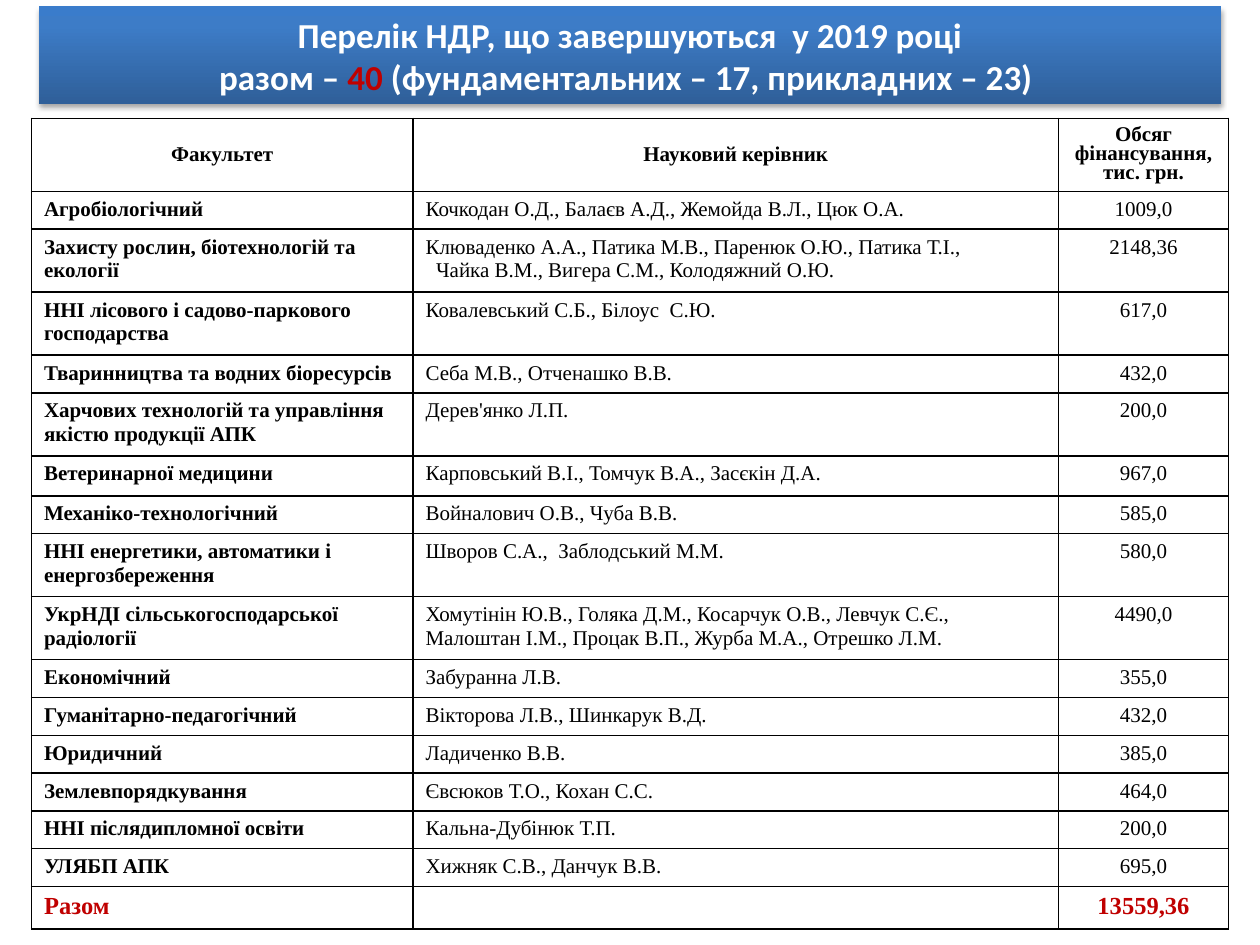
from lxml import etree
from pptx import Presentation
from pptx.dml.color import RGBColor
from pptx.enum import text
from pptx.oxml import parse_xml
from pptx.oxml import ns
from pptx.util import Pt

SINGLE, DOUBLE = 21.6, 36
HEADINGS = ("Факультет", "Науковий керівник", "Обсяг фінансування, тис. грн.")
FACULTIES = [
    ("Агробіологічний", "Кочкодан О.Д., Балаєв А.Д., Жемойда В.Л., Цюк О.А.", "1009,0", SINGLE),
    ("Захисту рослин, біотехнологій та екології",
     "Клюваденко А.А., Патика М.В., Паренюк О.Ю., Патика Т.І.,\n"
     "Чайка В.М., Вигера С.М., Колодяжний О.Ю.", "2148,36", DOUBLE),
    ("ННІ лісового і садово-паркового господарства", "Ковалевський С.Б., Білоус  С.Ю.", "617,0", DOUBLE),
    ("Тваринництва та водних біоресурсів", "Себа М.В., Отченашко В.В.", "432,0", SINGLE),
    ("Харчових технологій та управління якістю продукції АПК", "Дерев'янко Л.П.", "200,0", DOUBLE),
    ("Ветеринарної медицини", "Карповський В.І., Томчук В.А., Засєкін Д.А.", "967,0", 22.9),
    ("Механіко-технологічний", "Войналович О.В., Чуба В.В.", "585,0", SINGLE),
    ("ННІ енергетики, автоматики і енергозбереження", "Шворов С.А.,  Заблодський М.М.", "580,0", DOUBLE),
    ("УкрНДІ сільськогосподарської  радіології",
     "Хомутінін Ю.В., Голяка Д.М., Косарчук О.В., Левчук С.Є.,\v"
     "Малоштан І.М., Процак В.П., Журба М.А., Отрешко Л.М.", "4490,0", DOUBLE),
    ("Економічний", "Забуранна Л.В.", "355,0", SINGLE),
    ("Гуманітарно-педагогічний", "Вікторова Л.В., Шинкарук В.Д.", "432,0", SINGLE),
    ("Юридичний", "Ладиченко В.В.", "385,0", SINGLE),
    ("Землевпорядкування", "Євсюков Т.О., Кохан С.С.", "464,0", SINGLE),
    ("ННІ післядипломної освіти", "Кальна-Дубінюк Т.П.", "200,0", SINGLE),
    ("УЛЯБП АПК", "Хижняк С.В., Данчук В.В.", "695,0", SINGLE),
]
TOTAL = ("Разом", "", "13559,36")


def color(hex_value):
    return RGBColor.from_string(hex_value)


class SlideBuilder:
    title_font, table_font = "Calibri", "Times New Roman"
    ink, paper, accent = "000000", "FFFFFF", "C00000"
    gradient = ((0, "2F5F99"), (80, "3D7CC7"), (100, "3A7CCB"))

    def __init__(self, slide):
        self.slide = slide

    def format_run(self, run, font, size, hex_value, bold):
        run.font.name = font
        run.font.size = Pt(size)
        run.font.bold = bold
        run.font.color.rgb = color(hex_value)

    def title(self, lines, left, top, width, height):
        banner = self.slide.shapes.title
        banner.left, banner.top, banner.width, banner.height = map(Pt, (left, top, width, height))
        frame = banner.text_frame
        frame.auto_size = text.MSO_AUTO_SIZE.NONE
        frame.word_wrap = True
        frame.vertical_anchor = text.MSO_ANCHOR.MIDDLE
        for index, parts in enumerate(lines):
            paragraph = frame.add_paragraph() if index else frame.paragraphs[0]
            paragraph.alignment = text.PP_ALIGN.CENTER
            for wording, hex_value in parts:
                run = paragraph.add_run()
                run.text = wording
                self.format_run(run, self.title_font, 20, hex_value, True)
        stops = "".join(
            f'<a:gs pos="{position * 1000}"><a:srgbClr val="{color(value)}"/></a:gs>'
            for position, value in self.gradient)
        properties = banner.element.spPr
        properties.append(parse_xml(
            f'<a:gradFill {ns.nsdecls("a")} rotWithShape="1"><a:gsLst>{stops}</a:gsLst>'
            '<a:lin ang="16200000" scaled="0"/></a:gradFill>'))
        properties.append(parse_xml(
            f'<a:effectLst {ns.nsdecls("a")}><a:outerShdw blurRad="{Pt(3.1)}" dist="{Pt(1.8)}" '
            f'dir="5400000" rotWithShape="0"><a:srgbClr val="{color(self.ink)}">'
            '<a:alpha val="35000"/></a:srgbClr></a:outerShdw></a:effectLst>'))

    def table(self, left, top, widths, heights):
        grid = self.slide.shapes.add_table(
            len(heights), len(widths), Pt(left), Pt(top), Pt(sum(widths)), Pt(sum(heights))).table
        grid.first_row = grid.horz_banding = False
        for column, width in zip(grid.columns, widths):
            column.width = Pt(width)
        for row, height in zip(grid.rows, heights):
            row.height = Pt(height)
        return grid

    def cell(self, cell, wording, size=12, hex_value=ink, bold=False, centred=False):
        cell.text_frame.text = wording
        for paragraph in cell.text_frame.paragraphs:
            if centred:
                paragraph.alignment = text.PP_ALIGN.CENTER
            for run in paragraph.runs:
                self.format_run(run, self.table_font, size, hex_value, bold)
            if not wording:
                etree.SubElement(paragraph._p, ns.qn("a:endParaRPr"), sz=str(size * 100))
        properties = cell._tc.get_or_add_tcPr()
        for side in ("lnL", "lnR", "lnT", "lnB"):
            properties.append(parse_xml(
                f'<a:{side} {ns.nsdecls("a")} w="{Pt(1)}"><a:solidFill>'
                f'<a:srgbClr val="{color(self.ink)}"/></a:solidFill></a:{side}>'))
        cell.fill.background()


def main():
    deck = Presentation()
    deck.slide_width, deck.slide_height = Pt(720), Pt(540)
    builder = SlideBuilder(deck.slides.add_slide(deck.slide_layouts[5]))
    white, red = builder.paper, builder.accent

    builder.title([
        [("Перелік НДР, що завершуються  у 2019 році", white)],
        [("разом – ", white), ("40", red), (" (фундаментальних – 17, прикладних – 23) ", white)],
    ], 22.3, 3.6, 675.4, 55.7)

    heights = [41.7, *(faculty[3] for faculty in FACULTIES), 24]
    funding = builder.table(18, 67.6, (218, 369, 97), heights)

    for column, heading in enumerate(HEADINGS):
        head = funding.cell(0, column)
        builder.cell(head, heading, bold=True, centred=True)
        head.vertical_anchor = text.MSO_ANCHOR.MIDDLE
    funding.cell(0, 2).text_frame.paragraphs[0].line_spacing = 0.8

    for row, faculty in enumerate(FACULTIES, 1):
        for column, wording in enumerate(faculty[:3]):
            builder.cell(funding.cell(row, column), wording, bold=column == 0, centred=column == 2)
    second_line = funding.cell(2, 1).text_frame.paragraphs[1]
    second_line._p.get_or_add_pPr().set("marL", str(Pt(6)))

    for column, wording in enumerate(TOTAL):
        builder.cell(funding.cell(len(FACULTIES) + 1, column), wording, 14, red, True, column == 2)

    deck.save("out.pptx")


if __name__ == "__main__":
    main()
